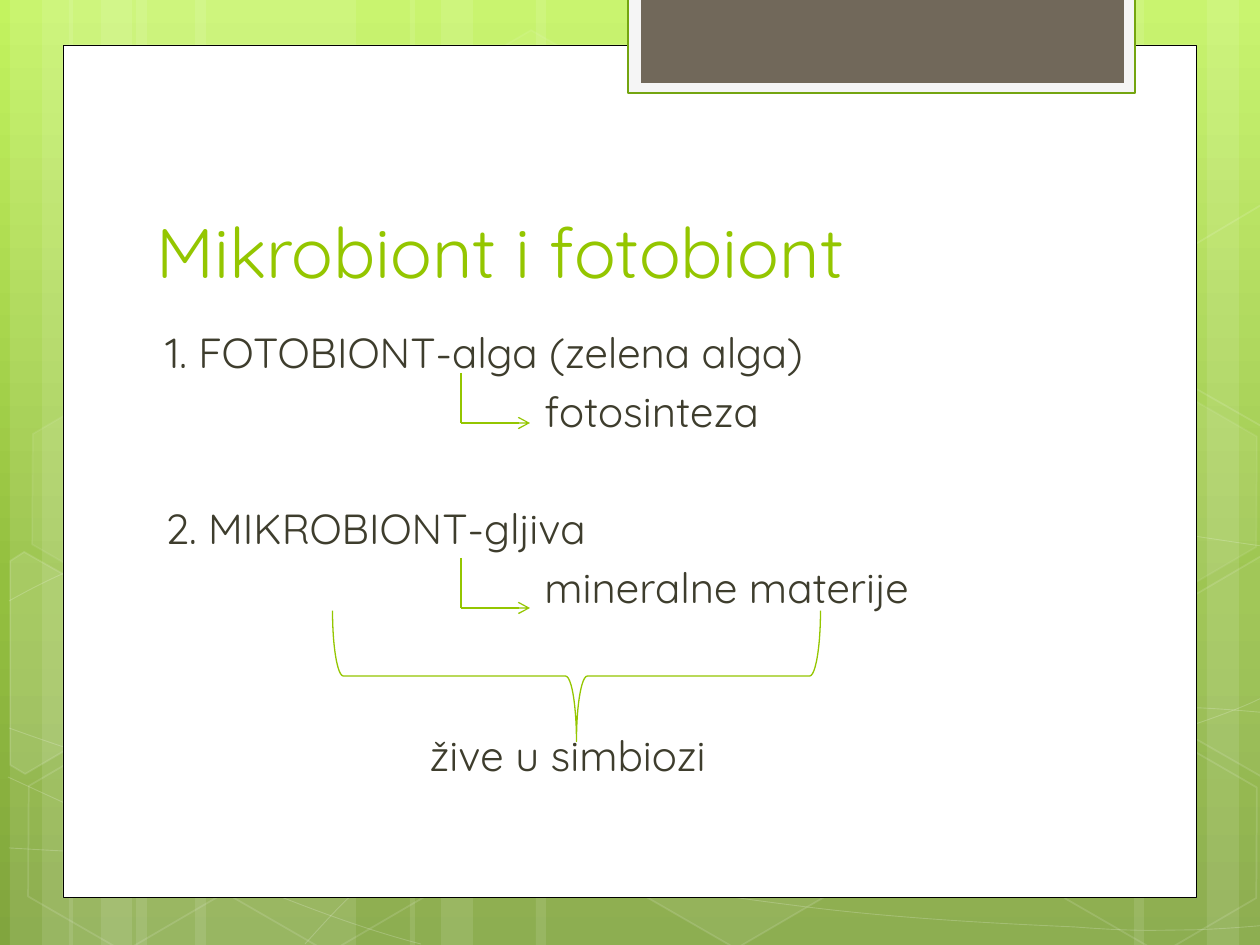
from copy import deepcopy
from dataclasses import dataclass
from math import cos, radians, sin
from typing import Any, Optional

from lxml import etree
from pptx import Presentation
from pptx.dml.color import RGBColor
from pptx.enum.shapes import MSO_CONNECTOR, MSO_SHAPE
from pptx.enum.text import MSO_ANCHOR
from pptx.oxml.ns import qn
from pptx.util import Pt

PX = 914400 / 126
RECT, HEX, BRACE = MSO_SHAPE.RECTANGLE, MSO_SHAPE.HEXAGON, MSO_SHAPE.LEFT_BRACE
STRAIGHT = MSO_CONNECTOR.STRAIGHT
BOTTOM, TOP = MSO_ANCHOR.BOTTOM, MSO_ANCHOR.TOP
WHITE, GREEN, INK = "FFFFFF", "94C600", "3E3D2D"
FONT = "Quicksand"
TILT = 30


@dataclass
class Look:
    fill: Optional[str] = None
    clear: int = 100
    line: Optional[str] = None
    width: float = 1
    faint: int = 100


@dataclass
class Cell:
    left: int
    top: int
    look: Look


@dataclass
class Shard:
    hub: tuple
    dots: list
    look: Look


@dataclass
class Row:
    text: str
    left: int
    before: float


STRIPS = [(136, 220), (10, 63), (42, 105), (195, 220), (69, 63), (101, 105),
          (924, 220), (1207, 63), (1134, 105), (536, 388), (410, 63), (441, 105)]
CURVES = [
    [(9, 848), (77, 852), (145, 856), (239, 854), (334, 853), (451, 851), (577, 838),
     (703, 825), (882, 801), (998, 777), (1113, 753), (1231, 716), (1269, 694)],
    [(9, 601), (45, 581), (82, 562), (152, 543), (224, 524), (326, 496), (437, 488),
     (549, 479), (685, 478), (824, 488), (963, 498), (1193, 537), (1269, 547)],
    [(8, 777), (160, 847), (311, 916), (421, 944)],
    [(9, 728), (48, 742), (88, 756), (161, 776), (234, 795), (344, 827), (450, 848),
     (554, 869), (687, 892), (791, 905), (896, 919), (1008, 924), (1075, 927),
     (1140, 932), (1158, 930), (1191, 930), (1223, 929), (1246, 927), (1269, 925)],
    [(305, 944), (328, 919), (350, 893), (381, 871), (411, 848), (454, 823), (489, 805),
     (524, 788), (546, 780), (592, 767), (638, 754), (722, 737), (766, 728),
     (811, 719), (818, 719), (857, 717), (896, 713), (958, 709), (1000, 708),
     (1045, 707), (1116, 708), (1116, 708), (1144, 708), (1172, 708), (1201, 708),
     (1223, 709), (1245, 711), (1268, 713)],
]
STRIP = Look(WHITE, 10)
WAVE = Look(line=WHITE, width=0.5, faint=20)
BARE = Look(line=WHITE, faint=12)
SOFT = Look(WHITE, 7, WHITE, faint=8)
FULL = Look(WHITE, 10, WHITE, faint=12)
CELLS = [Cell(421, 45, Look(WHITE, 4, WHITE, faint=8)),
         Cell(626, 742, Look(WHITE, 6, WHITE, faint=12)),
         Cell(14, 745, BARE), Cell(18, 393, SOFT), Cell(219, 746, BARE),
         Cell(949, 571, FULL), Cell(1051, 747, BARE), Cell(1051, 396, SOFT)]
SHARDS = [
    Shard((45, 674), [(10, 561), (24, 552), (121, 607), (120, 718), (25, 774), (10, 765)], FULL),
    Shard((1241, 655), [(1167, 611), (1261, 556), (1271, 562), (1271, 772), (1263, 777),
                        (1167, 722)], Look(WHITE, 4, WHITE, faint=12)),
    Shard((1241, 304), [(1167, 261), (1261, 205), (1271, 212), (1271, 422), (1263, 427),
                        (1167, 372)], BARE),
]
PANELS = [((63, 45, 1134, 853), Look(WHITE, line="000000", width=0.5)),
          ((628, -3, 507, 96), Look("F5F5F5", line="74A510", width=1.25)),
          ((641, -3, 483, 86), Look("71685A"))]
ROWS = [Row("1. FOTOBIONT-alga (zelena alga)", 9, 0), Row("fotosinteza", 388, 5),
        Row("2. MIKROBIONT-gljiva", 9, 38), Row("mineralne materije", 388, 5),
        Row("žive u simbiozi", 273, 67)]


def emu(*vals: float) -> list:
    return [round(v * PX) for v in vals]


def rgb(code: str) -> RGBColor:
    return RGBColor.from_string(code)


def put(obj: Any, **vals: Any) -> None:
    for key, val in vals.items():
        setattr(obj, key, val)


def tint(fill: Any, code: Optional[str]) -> None:
    if code is None:
        fill.background()
    else:
        fill.solid()
        fill.fore_color.rgb = rgb(code)


def fade(root: Any, part: str, rate: int) -> None:
    node = root.find(part)
    if node is not None and rate < 100:
        etree.SubElement(node[0], qn("a:alpha"), val=str(rate * 1000))


def dress(shape: Any, look: Look) -> None:
    shape.shadow.inherit = False
    tint(shape.fill, look.fill)
    tint(shape.line.fill, look.line)
    shape.line.width = Pt(look.width)
    props = shape.element.spPr
    solid = qn("a:solidFill")
    fade(props, solid, look.clear)
    fade(props, qn("a:ln") + "/" + solid, look.faint)


def block(slide: Any, kind: Any, box: tuple, look: Look, turn: int = 0) -> Any:
    shape = slide.shapes.add_shape(kind, *emu(*box))
    shape.rotation = turn
    dress(shape, look)
    return shape


def trace(slide: Any, dots: list, look: Look, close: bool) -> Any:
    pen = slide.shapes.build_freeform(*emu(*dots[0]))
    pen.add_line_segments([emu(*dot) for dot in dots[1:]], close=close)
    shape = pen.convert_to_shape()
    dress(shape, look)
    return shape


def curve(slide: Any, knots: list) -> None:
    shape = trace(slide, knots, WAVE, False)
    route = shape.element.find(".//" + qn("a:path"))
    legs = route.findall(qn("a:lnTo"))
    for i in range(0, len(legs), 3):
        arc = etree.SubElement(route, qn("a:cubicBezTo"))
        for leg in legs[i:i + 3]:
            arc.append(leg[0])
            route.remove(leg)


def chip(slide: Any, shard: Shard) -> None:
    c, s = cos(radians(TILT)), sin(radians(TILT))
    x, y = shard.hub
    dots = [(x + (u - x) * c + (v - y) * s, y + (v - y) * c - (u - x) * s)
            for u, v in shard.dots]
    trace(slide, dots, shard.look, True).rotation = TILT


def link(slide: Any, ends: tuple, head: bool = False) -> None:
    wire = slide.shapes.add_connector(STRAIGHT, *emu(*ends))
    put(wire.line, width=Pt(0.75))
    tint(wire.line.fill, GREEN)
    if head:
        edge = wire.element.spPr.find(qn("a:ln"))
        etree.SubElement(edge, qn("a:tailEnd"), type="arrow")
    etree.SubElement(wire.element.spPr, qn("a:effectLst"))


def write(slide: Any, box: tuple, rows: list, size: int, code: str, anchor: Any) -> None:
    frame = slide.shapes.add_textbox(*emu(*box)).text_frame
    put(frame, word_wrap=True, vertical_anchor=anchor)
    for i, row in enumerate(rows):
        para = frame.add_paragraph() if i else frame.paragraphs[0]
        put(para, space_before=Pt(row.before))
        para._p.get_or_add_pPr().set("marL", str(emu(row.left)[0]))
        run = para.add_run()
        run.text = row.text
        put(run.font, name=FONT, size=Pt(size))
        run.font.color.rgb = rgb(code)


def shade(slide: Any) -> None:
    fill = slide.background.fill
    fill.gradient()
    fill.gradient_angle = 270
    stops = slide.element.find(".//" + qn("a:gsLst"))
    stops.insert(1, deepcopy(stops[0]))
    marks = [(0, "C3F35F"), (0.62, "93BF3F"), (1, "81A53E")]
    for stop, (spot, code) in zip(fill.gradient_stops, marks):
        stop.position = spot
        stop.color.rgb = rgb(code)


def main() -> None:
    deck = Presentation()
    wide, high = emu(1260, 945)
    put(deck, slide_width=wide, slide_height=high)
    slide = deck.slides.add_slide(deck.slide_layouts[6])
    shade(slide)
    for left, width in STRIPS:
        block(slide, RECT, (left, 0, width, 945), STRIP)
    for knots in CURVES:
        curve(slide, knots)
    for cell in CELLS:
        shape = block(slide, HEX, (cell.left, cell.top, 220, 192), cell.look, TILT)
        shape.adjustments[0] = 0.285
    for shard in SHARDS:
        chip(slide, shard)
    for box, look in PANELS:
        block(slide, RECT, box, look)
    write(slide, (144, 141, 968, 158), [Row("Mikrobiont i fotobiont", 0, 0)], 40, GREEN, BOTTOM)
    write(slide, (144, 320, 934, 484), ROWS, 24, INK, TOP)
    for top in (373, 558):
        link(slide, (461, top, 461, top + 50))
        link(slide, (461, top + 50, 530, top + 50), True)
    block(slide, BRACE, (511, 432, 131, 488), Look(line=GREEN, width=0.75), 270)
    deck.save("out.pptx")


if __name__ == "__main__":
    main()
